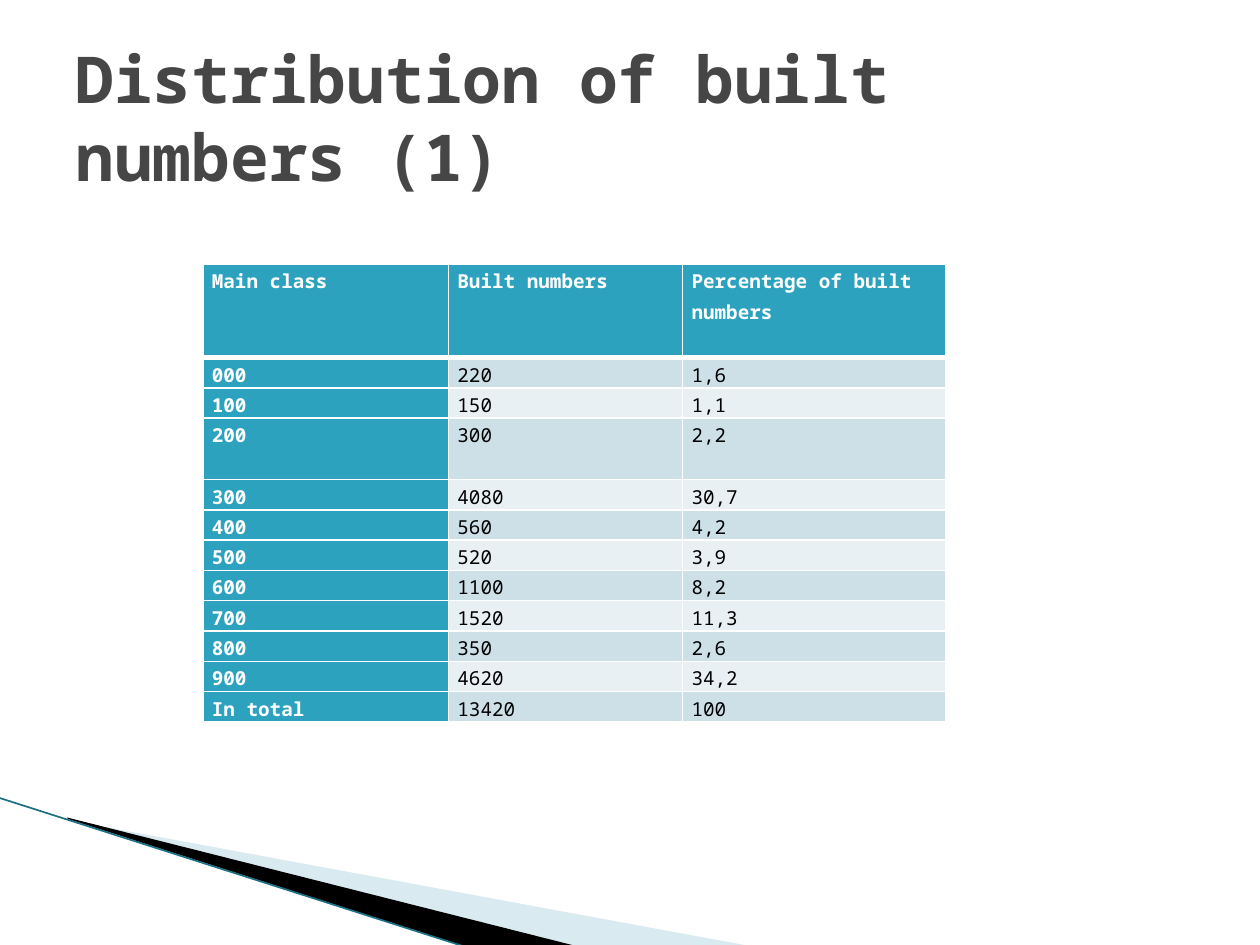
from dataclasses import dataclass
from typing import NamedTuple

from lxml.etree import SubElement
from pptx import Presentation
from pptx.dml.color import RGBColor as Rgb
from pptx.enum.shapes import MSO_CONNECTOR as Connector
from pptx.enum.text import MSO_ANCHOR as Anchor
from pptx.oxml.ns import qn
from pptx.util import Cm, Pt


@dataclass(frozen=True)
class Theme:
    font: str = "Noto Sans Mono"
    title_size: float = 36.9
    table_size: float = 11
    title: str = "464646"
    accent: str = "2DA2BF"
    bands: tuple[str, str] = ("CDE0E8", "E8F0F4")
    body: str = "000000"
    white: str = "FFFFFF"
    pale_wedge: str = "A0CBDC"
    dark_wedge: str = "000000"
    edge: str = "1A7083"


class Wedge(NamedTuple):
    points: list[tuple[float, float]]
    color: str
    opacity: int


class ClassRow(NamedTuple):
    main_class: str
    built: str
    percentage: str
    height: float = 0.61


THEME = Theme()

WEDGES = [
    Wedge([(1.4, 16.54), (15.11, 19.07), (11.58, 19.07), (1.4, 16.51)],
          THEME.pale_wedge, 40),
    Wedge([(1.35, 16.48), (11.61, 19.07), (9.45, 19.1), (1.37, 16.51)],
          THEME.dark_wedge, 100),
]

COLUMN_WIDTHS = [4.95, 4.72, 5.31]
ROWS = [
    ClassRow("Main class", "Built numbers", "Percentage of built numbers", 1.88),
    ClassRow("000", "220", "1,6"),
    ClassRow("100", "150", "1,1"),
    ClassRow("200", "300", "2,2", 1.24),
    ClassRow("300", "4080", "30,7"),
    ClassRow("400", "560", "4,2"),
    ClassRow("500", "520", "3,9"),
    ClassRow("600", "1100", "8,2"),
    ClassRow("700", "1520", "11,3"),
    ClassRow("800", "350", "2,6"),
    ClassRow("900", "4620", "34,2"),
    ClassRow("In total", "13420", "100"),
]


def style_font(para, size: float, color: str, bold: bool) -> None:
    font = para.font
    font.name = THEME.font
    font.size = Pt(size)
    font.bold = bold
    font.color.rgb = Rgb.from_string(color)


def add_wedge(page, wedge: Wedge) -> None:
    first, *others = [(Cm(x), Cm(y)) for x, y in wedge.points]
    builder = page.shapes.build_freeform(*first)
    builder.add_line_segments(others, close=True)
    shape = builder.convert_to_shape()
    shape.shadow.inherit = False
    shape.line.fill.background()
    shape.fill.solid()
    shape.fill.fore_color.rgb = Rgb.from_string(wedge.color)
    if wedge.opacity < 100:
        color = shape.fill._xPr.find(".//" + qn("a:srgbClr"))
        SubElement(color, qn("a:alpha"), val=str(wedge.opacity * 1000))


def add_edge(page) -> None:
    edge = page.shapes.add_connector(
        Connector.STRAIGHT, Cm(-0.03), Cm(16.08), Cm(9.42), Cm(19.1))
    edge.line.color.rgb = Rgb.from_string(THEME.edge)
    edge.line.width = Pt(0.95)
    SubElement(edge._element.spPr, qn("a:effectLst"))


def add_title(page, text: str) -> None:
    box = page.shapes.add_textbox(Cm(1.27), Cm(0.76), Cm(22.86), Cm(3.18))
    frame = box.text_frame
    frame.word_wrap = True
    frame.vertical_anchor = Anchor.MIDDLE
    para = frame.paragraphs[0]
    para.text = text
    style_font(para, THEME.title_size, THEME.title, True)


def add_borders(cell, top: float, bottom: float) -> None:
    properties = cell._tc.get_or_add_tcPr()
    for side, width in (("L", 1), ("R", 1), ("T", top), ("B", bottom)):
        line = SubElement(properties, qn(f"a:ln{side}"), w=str(Pt(width)))
        fill = SubElement(line, qn("a:solidFill"))
        SubElement(fill, qn("a:srgbClr"), val=THEME.white)


def fill_cell(cell, text: str, row: int, column: int) -> None:
    heading = row == 0 or column == 0
    add_borders(cell, 3 if row == 1 else 1, 3 if row == 0 else 1)
    cell.fill.solid()
    cell.fill.fore_color.rgb = Rgb.from_string(
        THEME.accent if heading else THEME.bands[(row - 1) % 2])
    cell.margin_left = cell.margin_right = Cm(0.18)
    cell.margin_top = cell.margin_bottom = 0
    para = cell.text_frame.paragraphs[0]
    para.text = text
    para.line_spacing = 1.15
    style_font(para, THEME.table_size,
               THEME.white if heading else THEME.body, heading)


def add_class_table(page) -> None:
    table = page.shapes.add_table(
        len(ROWS), len(COLUMN_WIDTHS), Cm(4.09), Cm(5.33),
        Cm(sum(COLUMN_WIDTHS)), Cm(sum(row.height for row in ROWS))).table
    for column, width in zip(table.columns, COLUMN_WIDTHS):
        column.width = Cm(width)
    for row_index, row in enumerate(ROWS):
        table.rows[row_index].height = Cm(row.height)
        for column_index, text in enumerate(row[:3]):
            fill_cell(table.cell(row_index, column_index), text,
                      row_index, column_index)


def main() -> None:
    deck = Presentation()
    deck.slide_width, deck.slide_height = Cm(25.4), Cm(19.05)
    page = deck.slides.add_slide(deck.slide_layouts[6])
    for wedge in WEDGES:
        add_wedge(page, wedge)
    add_edge(page)
    add_title(page, "Distribution of built numbers (1)")
    add_class_table(page)
    deck.save("out.pptx")


if __name__ == "__main__":
    main()
